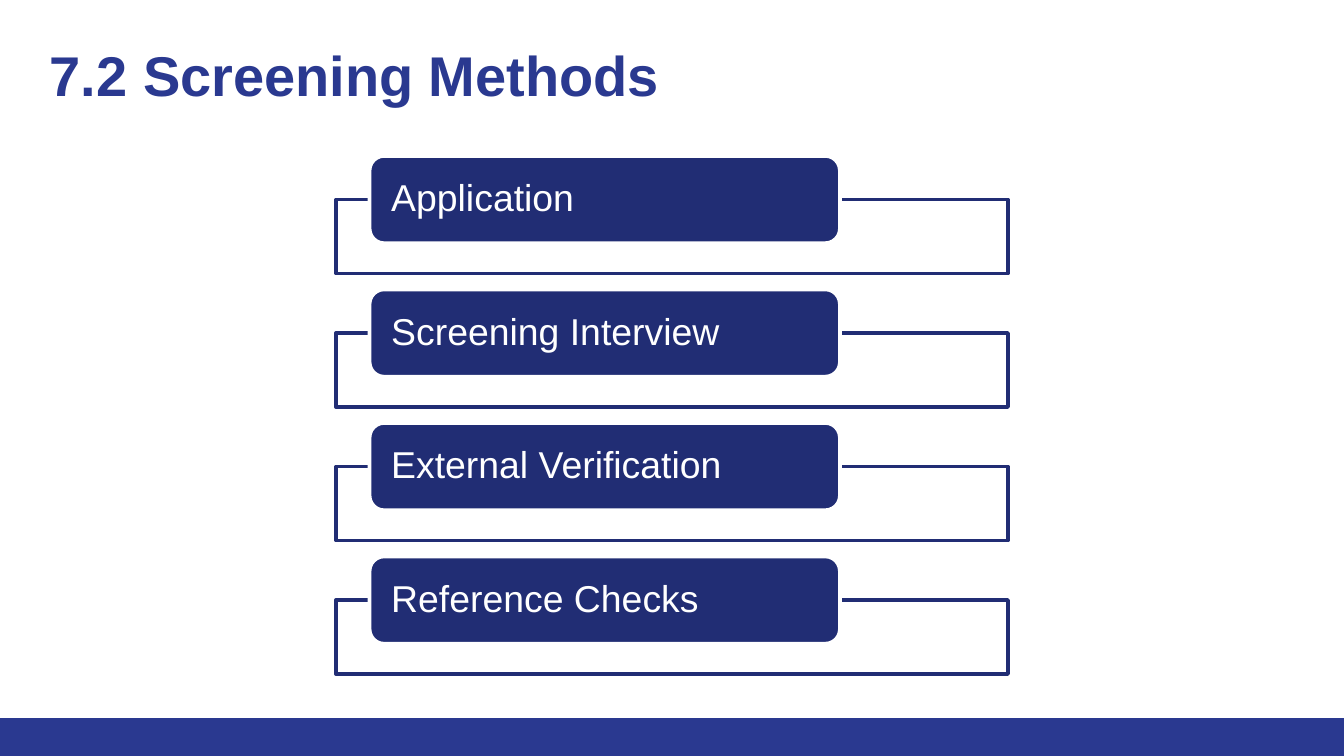
from dataclasses import dataclass

from lxml.etree import SubElement
from pptx import Presentation
from pptx.dml.color import RGBColor
from pptx.enum.shapes import MSO_SHAPE as Shape
from pptx.enum.text import MSO_ANCHOR as Anchor, PP_ALIGN as Align
from pptx.oxml.ns import qn
from pptx.util import Inches, Pt


@dataclass(frozen=True)
class Theme:
    font: str = "Arial"
    title_color: RGBColor = RGBColor(0x2A, 0x39, 0x90)
    method_color: RGBColor = RGBColor(0x21, 0x2D, 0x74)
    white: RGBColor = RGBColor(0xFF, 0xFF, 0xFF)
    title_size: Pt = Pt(30)
    method_size: Pt = Pt(20)
    outline: Pt = Pt(2)


THEME = Theme()
WIDTH = 10
HEIGHT = WIDTH * 9 / 16
METHODS = ["Application", "Screening Interview", "External Verification", "Reference Checks"]
FIRST_TOP, LAST_TOP = 1.16, 4.14
ROW_PITCH = (LAST_TOP - FIRST_TOP) / (len(METHODS) - 1)
LABEL_HEIGHT, FRAME_HEIGHT = 0.65, 0.55


def set_attributes(target, values):
    for name, value in values.items():
        setattr(target, name, value)


def place(shape, left, top, width, height):
    values = dict(left=left, top=top, width=width, height=height)
    set_attributes(shape, {name: Inches(value) for name, value in values.items()})


def write(shape, text, frame_format, paragraph_format, font_format):
    set_attributes(shape.text_frame, {"word_wrap": True, **frame_format})
    shape.text_frame.text = text
    paragraph = shape.text_frame.paragraphs[0]
    set_attributes(paragraph, {"alignment": Align.LEFT, **paragraph_format})
    font_format = dict(font_format)
    paragraph.runs[0].font.color.rgb = font_format.pop("color")
    set_attributes(paragraph.runs[0].font, {"name": THEME.font, **font_format})


def add_box(slide, preset, position, fill, line=None):
    box = slide.shapes.add_shape(preset, *map(Inches, position))
    box.shadow.inherit = False
    box.fill.solid()
    box.fill.fore_color.rgb = fill
    if line is None:
        box.line.fill.background()
    else:
        box.line.color.rgb = line
        box.line.width = THEME.outline
    return box


def set_opacity(box, percent):
    fill = box.element.spPr.find(qn("a:solidFill"))
    SubElement(fill[0], qn("a:alpha"), val=str(percent * 1000))


def add_title(slide, text):
    title = slide.shapes.title
    place(title, 0.27, 0.2, 9.2, 0.89)
    inset = Inches(0.1)
    write(title, text,
          dict(vertical_anchor=Anchor.TOP, margin_left=inset, margin_right=inset,
               margin_top=inset, margin_bottom=inset),
          {}, dict(size=THEME.title_size, bold=True, color=THEME.title_color))


def add_method(slide, row, text):
    """Add an outlined frame with its label straddling the top edge."""
    top = FIRST_TOP + row * ROW_PITCH
    frame_top = top + LABEL_HEIGHT / 2
    frame = add_box(slide, Shape.RECTANGLE, (WIDTH / 4, frame_top, WIDTH / 2, FRAME_HEIGHT),
                    THEME.white, THEME.method_color)
    set_opacity(frame, 90)
    label = add_box(slide, Shape.ROUNDED_RECTANGLE,
                    (WIDTH * 0.275, top, WIDTH * 0.35, LABEL_HEIGHT),
                    THEME.method_color, THEME.white)
    inset = Inches(0.13)
    write(label, text,
          dict(vertical_anchor=Anchor.MIDDLE, margin_left=inset, margin_right=inset,
               margin_top=0, margin_bottom=0),
          dict(line_spacing=0.9), dict(size=THEME.method_size, color=THEME.white))


def main():
    deck = Presentation()
    deck.slide_width, deck.slide_height = Inches(WIDTH), Inches(HEIGHT)
    slide = deck.slides.add_slide(deck.slide_layouts[5])
    add_box(slide, Shape.RECTANGLE, (0, HEIGHT * 0.95, WIDTH, HEIGHT * 0.05), THEME.title_color)
    add_title(slide, "7.2 Screening Methods")
    for row, method in enumerate(METHODS):
        add_method(slide, row, method)
    deck.save("out.pptx")


if __name__ == "__main__":
    main()
